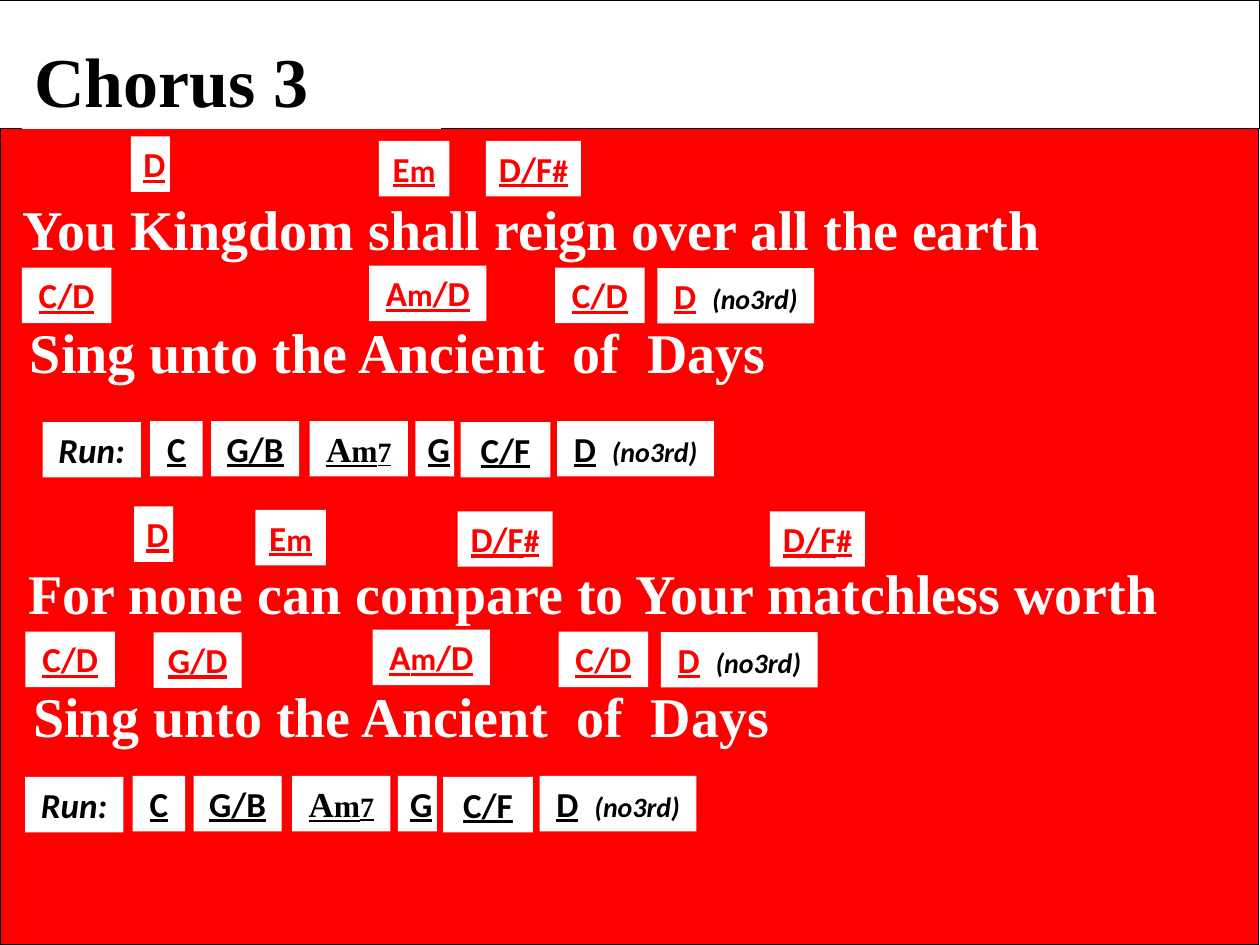
"""Chord sheet slide for the third chorus of a worship song."""
from dataclasses import dataclass

import pptx
import pptx.dml.color
import pptx.enum.shapes
import pptx.enum.text
import pptx.util

Pt = pptx.util.Pt


@dataclass(frozen=True)
class Theme:
    """Colours, fonts and type sizes of the slide."""
    red: str = "FF0000"
    white: str = "FFFFFF"
    black: str = "000000"
    serif: str = "Times New Roman"
    sans: str = "Calibri"
    title: int = 40
    lyric: int = 32
    chord: int = 20
    minor: int = 18
    note: int = 16


THEME = Theme()
CHORD_HEIGHT = 31.7
NO_THIRD = "(no3rd)"
CHORD_WIDTHS = {
    "D": 22.3, "G": 22.3, "C": 30, "Em": 40.3, "D/F#": 54.3, "C/D": 51.2,
    "C/F": 51.2, "G/B": 50.4, "G/D": 50.4, "Am/D": 67, "Am7": 56.2,
    "Run:": 56.2, "D " + NO_THIRD: 89.6,
}


def rgb(colour):
    """Turn a hex string into a colour."""
    return pptx.dml.color.RGBColor.from_string(colour)


def add_panel(slide, left, top, width, height, fill, outlined=False):
    """Add a flat rectangle, with a thin black edge if outlined."""
    panel = slide.shapes.add_shape(
        pptx.enum.shapes.MSO_SHAPE.RECTANGLE, Pt(left), Pt(top), Pt(width), Pt(height))
    panel.shadow.inherit = False
    panel.fill.solid()
    panel.fill.fore_color.rgb = rgb(fill)
    if outlined:
        panel.line.color.rgb = rgb(THEME.black)
        panel.line.width = Pt(0.75)
    else:
        panel.line.fill.background()
    return panel


def start_text(holder, alignment):
    """Prepare the text frame of a holder and return its paragraph."""
    frame = holder.text_frame
    frame.word_wrap = True
    frame.auto_size = pptx.enum.text.MSO_AUTO_SIZE.SHAPE_TO_FIT_TEXT
    frame.vertical_anchor = pptx.enum.text.MSO_ANCHOR.TOP
    paragraph = frame.paragraphs[0]
    paragraph.alignment = alignment
    return paragraph


def write_line(holder, words, size, colour):
    """Write one bold serif line aligned left."""
    line = start_text(holder, pptx.enum.text.PP_ALIGN.LEFT)
    line.text = words
    line.font.name = THEME.serif
    line.font.bold = True
    line.font.size = Pt(size)
    line.font.color.rgb = rgb(colour)


def add_lyric(slide, left, top, words):
    """Add a line of lyrics."""
    lyric = slide.shapes.add_textbox(Pt(left), Pt(top), Pt(720), Pt(46))
    write_line(lyric, words, THEME.lyric, THEME.white)


def chord_parts(name):
    """Split a chord name into pieces of text with their sizes."""
    if name.endswith(NO_THIRD):
        return [("D", THEME.chord), ("  ", THEME.chord), (NO_THIRD, THEME.note)]
    if name == "Run:":
        return [(name, THEME.chord)]
    small = {"m": THEME.minor, "#": THEME.minor, "7": THEME.note}
    parts = []
    for symbol in name:
        size = small.get(symbol, THEME.chord)
        if parts and parts[-1][1] == size and size == THEME.chord:
            parts[-1] = (parts[-1][0] + symbol, size)
        else:
            parts.append((symbol, size))
    return parts


def add_chord(slide, name, left, top, colour):
    """Add a white chord label."""
    label = add_panel(slide, left, top, CHORD_WIDTHS[name], CHORD_HEIGHT, THEME.white)
    chord = start_text(label, pptx.enum.text.PP_ALIGN.CENTER)
    chord.font.name = THEME.serif if name == "Am7" else THEME.sans
    chord.font.bold = True
    for text, size in chord_parts(name):
        piece = chord.add_run()
        piece.text = text
        piece.font.size = Pt(size)
        remark = text in (NO_THIRD, "Run:")
        piece.font.italic = remark
        piece.font.underline = not remark and bool(text.strip())
        piece.font.color.rgb = rgb(THEME.black if remark else colour)


def add_chords(slide, chords, colour, shift=0, drop=0):
    """Add chord labels, all moved by the same shift and drop."""
    for name, left, top in chords:
        add_chord(slide, name, left + shift, top + drop, colour)


def add_refrain(slide, shift, drop):
    """Add the repeated refrain line with its chords."""
    add_lyric(slide, 2 + shift, 178 + drop, " Sing unto the Ancient  of  Days")
    add_chords(slide, [
        ("C/D", 12.5, 153), ("Am/D", 211, 151.8),
        ("C/D", 317.2, 153), ("D " + NO_THIRD, 375.7, 153.2),
    ], THEME.red, shift, drop)


def add_chord_run(slide, shift, drop):
    """Add the instrumental run of chords."""
    add_chords(slide, [
        ("Run:", 24.3, 241.2), ("C", 85.8, 240.6), ("G/B", 120.6, 240.6),
        ("Am7", 176.9, 240.6), ("G", 237.3, 240.6), ("C/F", 263.3, 241.2),
        ("D " + NO_THIRD, 318.4, 240.6),
    ], THEME.black, shift, drop)


def main():
    """Build and save the slide."""
    deck = pptx.Presentation()
    deck.slide_width, deck.slide_height = Pt(720), Pt(540)
    slide = deck.slides.add_slide(deck.slide_layouts[6])

    add_panel(slide, 0, 73.5, 719.3, 466.5, THEME.red, outlined=True)
    add_panel(slide, -0.5, 0, 720.5, 73.5, THEME.white, outlined=True)
    heading = add_panel(slide, 12.5, 18, 239.5, 55.7, THEME.white)
    write_line(heading, "Chorus 3", THEME.title, THEME.black)

    add_lyric(slide, -0.8, 107.5, " You Kingdom shall reign over all the earth")
    add_chords(slide, [
        ("D", 74.8, 78), ("Em", 216.5, 80.6), ("D/F#", 277.7, 80.6),
    ], THEME.red)
    add_refrain(slide, 0, 0)
    add_chord_run(slide, 0, 0)

    add_lyric(slide, 1.3, 315.5, " For none can compare to Your matchless worth")
    add_chords(slide, [
        ("D", 76.6, 289.4), ("Em", 145.9, 291.4), ("D/F#", 261.5, 292.2),
        ("D/F#", 440, 292.2), ("G/D", 87.8, 361.4),
    ], THEME.red)
    add_refrain(slide, 2, 208)
    add_chord_run(slide, -10, 202.8)

    deck.save("out.pptx")


if __name__ == "__main__":
    main()
